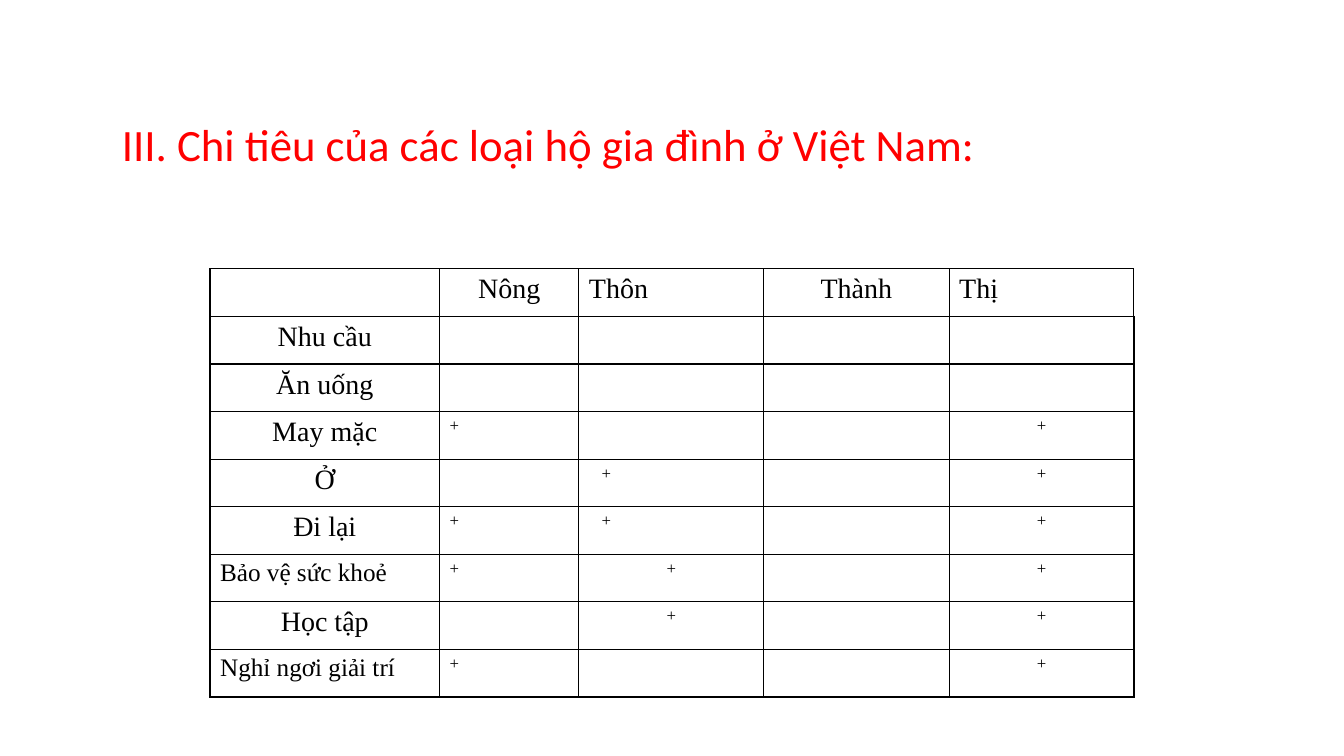
from pptx import Presentation
from pptx.dml.color import RGBColor
from pptx.enum.text import MSO_ANCHOR, PP_ALIGN
from pptx.oxml import parse_xml
from pptx.oxml.ns import nsdecls
from pptx.util import Pt

LEFT, CENTER = PP_ALIGN.LEFT, PP_ALIGN.CENTER
MIDDLE = MSO_ANCHOR.MIDDLE
PX = 6350  # EMU per px, 144 px to the inch


class Theme:
    title_color = RGBColor(0xFF, 0x00, 0x00)
    text_color = RGBColor(0x00, 0x00, 0x00)
    border_color = "000000"
    title_font, table_font = "Calibri", "Times New Roman"
    title_size, label_size, long_label_size, mark_size = 32, 20, 18, 12
    thin_border, border = 0.75, 1


def style_font(font, name, size, color):
    font.name, font.size = name, Pt(size)
    font.color.rgb = color


def set_borders(cell, width):
    properties = cell._tc.get_or_add_tcPr()
    for side in "LRTB":
        properties.append(parse_xml(
            f'<a:ln{side} {nsdecls("a")} w="{Pt(width)}"><a:solidFill>'
            f'<a:srgbClr val="{Theme.border_color}"/></a:solidFill></a:ln{side}>'))


presentation = Presentation()
presentation.slide_width, presentation.slide_height = 1920 * PX, 1080 * PX
slide = presentation.slides.add_slide(presentation.slide_layouts[6])

# Title
title = slide.shapes.add_textbox(160 * PX, 120 * PX, 1665 * PX, 180 * PX)
title.text_frame.word_wrap = True
title.text_frame.vertical_anchor = MIDDLE
title.text_frame.text = "III. Chi tiêu của các loại hộ gia đình ở Việt Nam:"
paragraph = title.text_frame.paragraphs[0]
paragraph.line_spacing = 0.9
style_font(paragraph.runs[0].font, Theme.title_font, Theme.title_size, Theme.title_color)

# Spending table: text, alignment and left indent in px of each filled cell
HEADER = [None, ("Nông", CENTER, 0), ("Thôn", LEFT, 0), ("Thành", CENTER, 0), ("Thị", LEFT, 0)]
LEFT_MARK, INDENTED_MARK, CENTER_MARK = ("+", LEFT, 0), ("+", LEFT, 18), ("+", CENTER, 0)
NEEDS = [
    ("Nhu cầu", CENTER, None, None, None),
    ("Ăn uống", CENTER, None, None, None),
    ("May mặc", CENTER, LEFT_MARK, None, CENTER_MARK),
    ("Ở", CENTER, None, INDENTED_MARK, CENTER_MARK),
    ("Đi lại", CENTER, LEFT_MARK, INDENTED_MARK, CENTER_MARK),
    ("Bảo vệ sức khoẻ", LEFT, LEFT_MARK, CENTER_MARK, CENTER_MARK),
    ("Học tập", CENTER, None, CENTER_MARK, CENTER_MARK),
    ("Nghỉ ngơi giải trí", LEFT, LEFT_MARK, None, CENTER_MARK),
]
rows = [HEADER] + [[(need, alignment, 0), rural_1, rural_2, None, urban]
                   for need, alignment, rural_1, rural_2, urban in NEEDS]
COLUMN_WIDTHS = [328, 199, 264, 265, 264]
ROW_HEIGHT = 68

table = slide.shapes.add_table(
    len(rows), len(COLUMN_WIDTHS), 300 * PX, 384 * PX,
    sum(COLUMN_WIDTHS) * PX, len(rows) * ROW_HEIGHT * PX).table
table.first_row = table.horz_banding = False
for column, width in zip(table.columns, COLUMN_WIDTHS):
    column.width = width * PX

for row_index, row in enumerate(rows):
    table.rows[row_index].height = ROW_HEIGHT * PX
    for column_index, content in enumerate(row):
        cell = table.cell(row_index, column_index)
        is_heading = row_index == 0 and column_index > 0
        set_borders(cell, Theme.thin_border if is_heading else Theme.border)
        cell.fill.background()
        if content is None:
            continue
        text, alignment, indent = content
        cell.text_frame.text = text
        paragraph = cell.text_frame.paragraphs[0]
        paragraph.alignment = alignment
        if indent:
            paragraph._p.get_or_add_pPr().set("marL", str(indent * PX))
        if text == "+":
            size = Theme.mark_size
        elif column_index == 0 and alignment == LEFT:
            size = Theme.long_label_size
        else:
            size = Theme.label_size
        style_font(paragraph.runs[0].font, Theme.table_font, size, Theme.text_color)

presentation.save("out.pptx")
